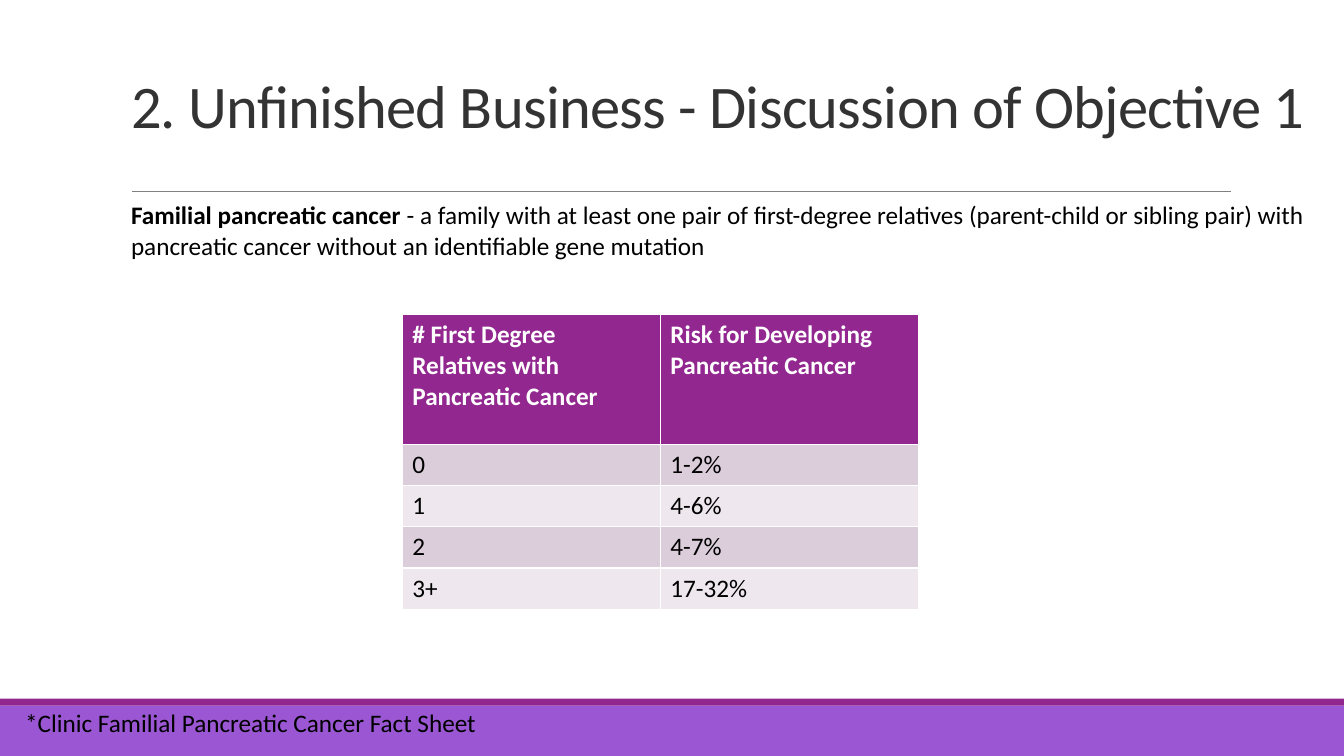
from dataclasses import dataclass
from typing import NamedTuple

from lxml import etree
from pptx import Presentation
from pptx import util as u
from pptx.dml.color import RGBColor
from pptx.enum import shapes, text
from pptx.oxml import ns


@dataclass(frozen=True)
class Theme:
    font: str = "Calibri"
    title_size: float = 43.2
    body_size: float = 18
    title_ink: str = "333333"
    ink: str = "000000"
    paper: str = "FFFFFF"
    rule: str = "808080"
    accent: str = "92278F"
    footer: str = "9B57D3"
    row_bands: tuple[str, str] = ("DCCDDB", "EEE8EE")


class Area(NamedTuple):
    """A place on the slide, in percent of its width and height."""
    left: float
    top: float
    width: float
    height: float


class Band(NamedTuple):
    area: Area
    colour: str


THEME = Theme()
SLIDE_W, SLIDE_H = u.Inches(13.33), u.Inches(7.5)
HEADER_H, ROW_H = 17.2, 5.45
BANDS = (
    Band(Area(0, 93.33, 100, 6.67), THEME.footer),
    Band(Area(0, 92.4, 100, 0.93), THEME.accent),
)
RISKS = (
    ("# First Degree Relatives with Pancreatic Cancer",
     "Risk for Developing Pancreatic Cancer"),
    ("0", "1-2%"),
    ("1", "4-6%"),
    ("2", "4-7%"),
    ("3+", "17-32%"),
)


def across(percent: float) -> int:
    return round(SLIDE_W * percent / 100)


def down(percent: float) -> int:
    return round(SLIDE_H * percent / 100)


def box(area: Area) -> tuple[int, int, int, int]:
    return across(area.left), down(area.top), across(area.width), down(area.height)


def place(shape, area: Area) -> None:
    shape.left, shape.top, shape.width, shape.height = box(area)


def style(paragraph, size: float, colour: str, bold: bool | None = None) -> None:
    font = paragraph.font
    font.name, font.size, font.bold = THEME.font, u.Pt(size), bold
    font.color.rgb = RGBColor.from_string(colour)


def draw_band(slide, band: Band) -> None:
    bar = slide.shapes.add_shape(shapes.MSO_SHAPE.RECTANGLE, *box(band.area))
    bar.shadow.inherit = False
    bar.fill.solid()
    bar.fill.fore_color.rgb = RGBColor.from_string(band.colour)
    bar.line.fill.background()


def draw_rule(slide, left: float, right: float, top: float) -> None:
    rule = slide.shapes.add_connector(
        shapes.MSO_CONNECTOR.STRAIGHT, across(left), down(top), across(right), down(top))
    rule.line.color.rgb = RGBColor.from_string(THEME.rule)
    rule.line.width = u.Pt(0.5)
    etree.SubElement(rule.element.spPr, ns.qn("a:effectLst"))


def write_title(slide, wording: str, area: Area) -> None:
    title = slide.shapes.title
    place(title, area)
    frame = title.text_frame
    frame.text = wording
    frame.auto_size = text.MSO_AUTO_SIZE.NONE
    frame.vertical_anchor = text.MSO_ANCHOR.BOTTOM
    line = frame.paragraphs[0]
    line.alignment, line.line_spacing = text.PP_ALIGN.LEFT, 0.85
    style(line, THEME.title_size, THEME.title_ink)
    # Letter spacing in hundredths of a point
    line.runs[0].font._element.set("spc", "-50")


def write_definition(slide, term: str, meaning: str, area: Area) -> None:
    definition = slide.placeholders[1]
    place(definition, area)
    frame = definition.text_frame
    frame.auto_size = text.MSO_AUTO_SIZE.NONE
    line = frame.paragraphs[0]
    for wording, bold in ((term, True), (meaning, False)):
        run = line.add_run()
        run.text, run.font.bold = wording, bold
    style(line, THEME.body_size, THEME.ink)
    line.space_before = u.Pt(0)
    # Plain paragraph: no bullet, no hanging indent
    properties = line._p.get_or_add_pPr()
    properties.set("marL", "0")
    properties.set("indent", "0")
    bullet = etree.Element(ns.qn("a:buNone"))
    properties.find(ns.qn("a:spcBef")).addnext(bullet)


def draw_risks(slide, area: Area) -> None:
    table = slide.shapes.add_table(len(RISKS), len(RISKS[0]), *box(area)).table
    for r, entries in enumerate(RISKS):
        header = r == 0
        table.rows[r].height = down(HEADER_H if header else ROW_H)
        fill = THEME.accent if header else THEME.row_bands[(r - 1) % 2]
        for c, entry in enumerate(entries):
            cell = table.cell(r, c)
            cell.text = entry
            cell.fill.solid()
            cell.fill.fore_color.rgb = RGBColor.from_string(fill)
            style(cell.text_frame.paragraphs[0], THEME.body_size,
                  THEME.paper if header else THEME.ink, header)


def write_source(slide, wording: str, area: Area) -> None:
    frame = slide.shapes.add_textbox(*box(area)).text_frame
    frame.word_wrap = True
    frame.text = wording
    style(frame.paragraphs[0], THEME.body_size, THEME.ink)


def main() -> None:
    deck = Presentation()
    deck.slide_width, deck.slide_height = SLIDE_W, SLIDE_H
    slide = deck.slides.add_slide(deck.slide_layouts[1])

    # Footer bands and title rule
    for band in BANDS:
        draw_band(slide, band)
    draw_rule(slide, 9.83, 91.6, 25.33)

    # Title and definition
    write_title(slide, "2. Unfinished Business - Discussion of Objective 1",
                Area(9, 0, 91, 19.33))
    write_definition(
        slide, "Familial pancreatic cancer ",
        "- a family with at least one pair of first-degree relatives (parent-child or "
        "sibling pair) with pancreatic cancer without an identifiable gene mutation",
        Area(9, 25.73, 92.72, 9.47))

    # Risk table and its source
    draw_risks(slide, Area(29.93, 41.6, 38.41, HEADER_H + ROW_H * (len(RISKS) - 1)))
    write_source(slide, "*Clinic Familial Pancreatic Cancer Fact Sheet",
                 Area(1.13, 92.93, 65.42, 5.33))

    deck.save("out.pptx")


if __name__ == "__main__":
    main()
